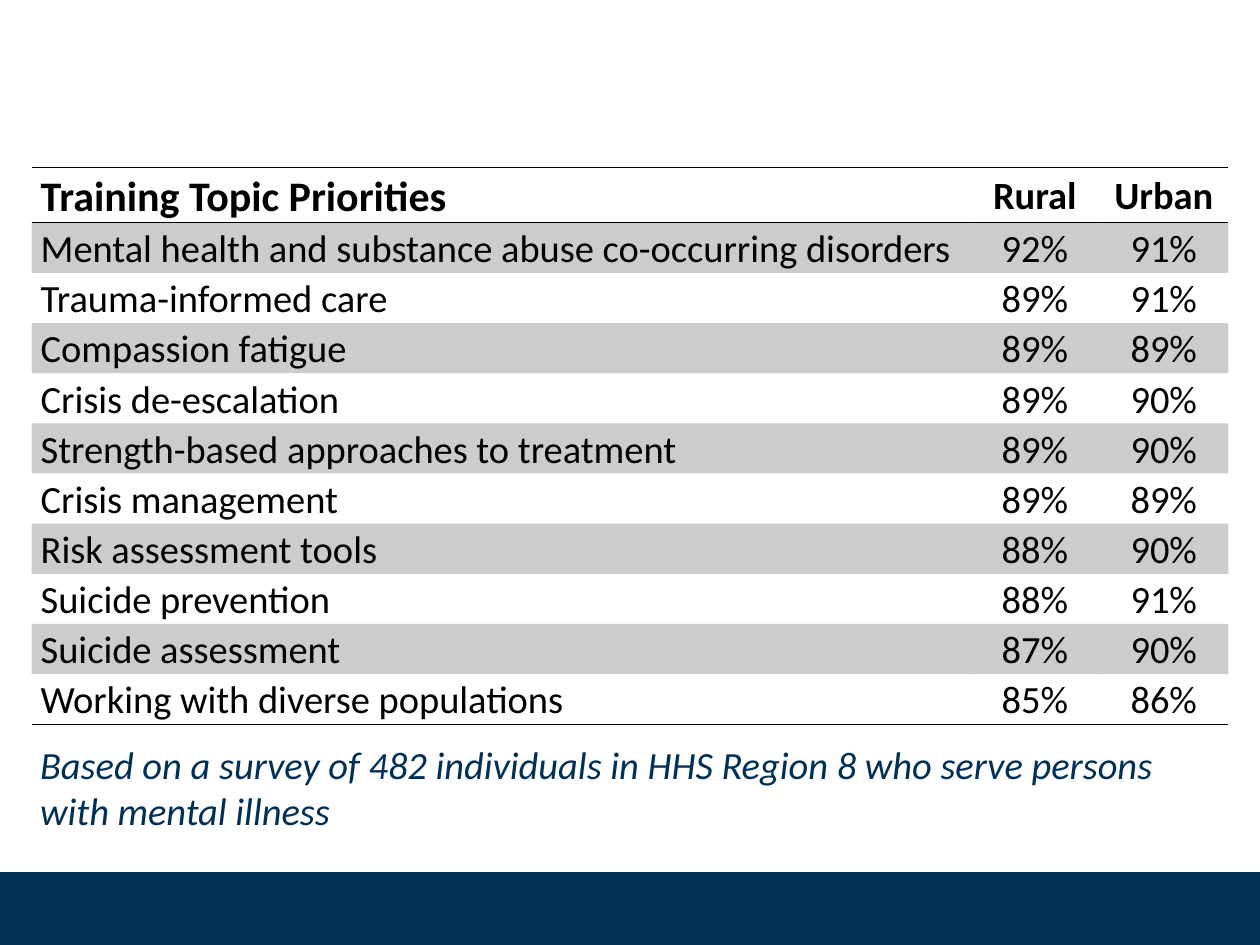
import pptx
import pptx.util
import pptx.dml.color
import pptx.enum.shapes
import pptx.enum.text
import pptx.oxml
import pptx.oxml.ns

Cm, Pt = pptx.util.Cm, pptx.util.Pt
NAVY, BLACK = "003058", "000000"
PLAIN_TABLE = "{2D5ABB26-0587-4C30-8999-92F81FD0307C}"


def color(hex_code):
    return pptx.dml.color.RGBColor.from_string(hex_code)


def add_rule(cell, side):
    cell._tc.get_or_add_tcPr().append(pptx.oxml.parse_xml(
        f'<a:{side} {pptx.oxml.ns.nsdecls("a")} w="12700"><a:solidFill>'
        f'<a:srgbClr val="{BLACK}"/></a:solidFill></a:{side}>'))


deck = pptx.Presentation()
deck.slide_width, deck.slide_height = Cm(25.4), Cm(19.05)
slide = deck.slides.add_slide(deck.slide_layouts[6])

# Footer band
footer = slide.shapes.add_shape(
    pptx.enum.shapes.MSO_SHAPE.RECTANGLE, 0, Cm(17.58), deck.slide_width, Cm(1.7))
footer.shadow.inherit = False
footer.fill.solid()
footer.fill.fore_color.rgb = color(NAVY)
footer.line.fill.background()

# Training priorities
priorities = [
    ("Training Topic Priorities", "Rural", "Urban"),
    ("Mental health and substance abuse co-occurring disorders", "92%", "91%"),
    ("Trauma-informed care", "89%", "91%"),
    ("Compassion fatigue", "89%", "89%"),
    ("Crisis de-escalation", "89%", "90%"),
    ("Strength-based approaches to treatment", "89%", "90%"),
    ("Crisis management", "89%", "89%"),
    ("Risk assessment tools", "88%", "90%"),
    ("Suicide prevention", "88%", "91%"),
    ("Suicide assessment", "87%", "90%"),
    ("Working with diverse populations", "85%", "86%"),
]
last = len(priorities) - 1
table = slide.shapes.add_table(
    len(priorities), 3, Cm(0.64), Cm(3.38), Cm(24.12), Cm(11.21)).table
table._tbl.tblPr.find(pptx.oxml.ns.qn("a:tableStyleId")).text = PLAIN_TABLE
table.horz_banding = False
for column, width in zip(table.columns, (18.92, 2.6, 2.6)):
    column.width = Cm(width)

for r, entries in enumerate(priorities):
    table.rows[r].height = Cm(1.11 if r == 0 else 1.01)
    for c, entry in enumerate(entries):
        cell = table.cell(r, c)
        cell.margin_left = cell.margin_right = Cm(0.18)
        cell.margin_top = cell.margin_bottom = 0
        cell.text = entry
        line = cell.text_frame.paragraphs[0]
        line.line_spacing = 1.07
        line.font.name = "Calibri"
        line.font.size = Pt(24 if r == c == 0 else 22)
        line.font.bold = r == 0
        line.font.color.rgb = color(BLACK)
        if c > 0:
            line.alignment = pptx.enum.text.PP_ALIGN.CENTER
            cell.vertical_anchor = pptx.enum.text.MSO_ANCHOR.MIDDLE
        # Rules around the header and under the last row
        if r == 0:
            add_rule(cell, "lnT")
        if r in (0, last):
            add_rule(cell, "lnB")
        # Odd rows are shaded with 20% black
        if r % 2:
            cell.fill.solid()
            cell.fill.fore_color.rgb = color(BLACK)
            shade = cell._tc.tcPr.find(".//" + pptx.oxml.ns.qn("a:srgbClr"))
            shade.append(pptx.oxml.parse_xml(
                f'<a:alpha {pptx.oxml.ns.nsdecls("a")} val="20000"/>'))
        else:
            cell.fill.background()

# Survey note
note = slide.shapes.add_textbox(Cm(0.56), Cm(14.81), Cm(24.2), Cm(2.13)).text_frame
note.word_wrap = True
note.text = ("Based on a survey of 482 individuals in HHS Region 8 "
             "who serve persons with mental illness")
basis = note.paragraphs[0]
basis.font.name = "Calibri"
basis.font.size = Pt(22)
basis.font.italic = True
basis.font.color.rgb = color(NAVY)

deck.save("out.pptx")
